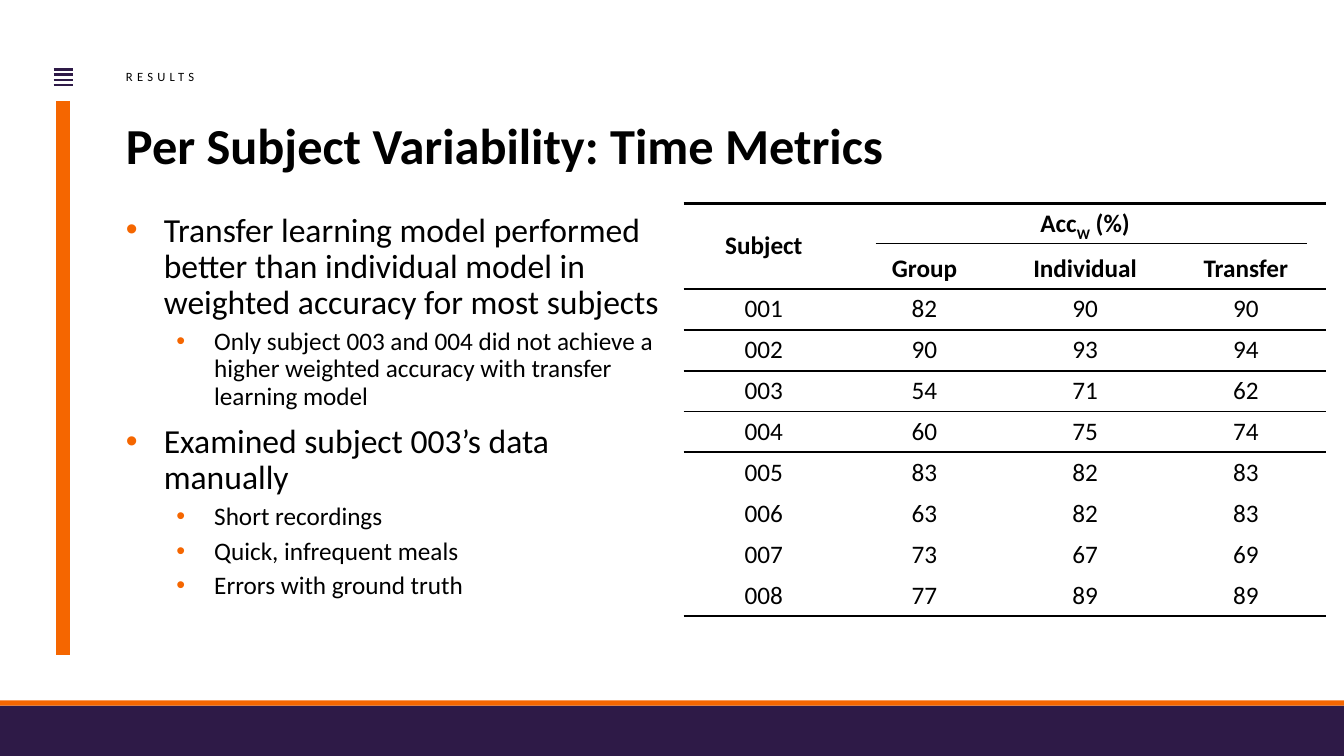
from dataclasses import dataclass

from lxml import etree
from pptx import Presentation
from pptx import util as u
from pptx.dml.color import RGBColor
from pptx.enum import shapes, text
from pptx.oxml import ns

PX = 9525


@dataclass(frozen=True)
class Theme:
    font: str = "Calibri"
    black: str = "000000"
    purple: str = "2E1A47"
    orange: str = "F56600"
    title: int = 36
    label: int = 9
    levels: tuple = (24, 18)
    cell: int = 18


def px(n):
    return u.Emu(n * PX)


def rgb(color):
    return RGBColor.from_string(color)


def child(parent, tag, **attrs):
    return etree.SubElement(parent, ns.qn(tag), **attrs)


class Deck:
    def __init__(self, theme):
        self.theme = theme
        self.prs = Presentation()
        self.prs.slide_width, self.prs.slide_height = px(1280), px(720)
        self.s = self.prs.slides.add_slide(self.prs.slide_layouts[1])

    def run(self, p, words, size, bold=False):
        r = p.add_run()
        r.text = words
        r.font.name = self.theme.font
        r.font.size = u.Pt(size)
        r.font.bold = bold
        r.font.color.rgb = rgb(self.theme.black)
        return r

    def frame(self, sp, box):
        sp.left, sp.top, sp.width, sp.height = map(px, box)
        tf = sp.text_frame
        tf.word_wrap = True
        tf.auto_size = text.MSO_AUTO_SIZE.NONE
        tf.vertical_anchor = text.MSO_ANCHOR.TOP
        tf.margin_left = tf.margin_top = tf.margin_right = tf.margin_bottom = 0
        return tf

    def title(self, words, box):
        p = self.frame(self.s.shapes.title, box).paragraphs[0]
        p.alignment = text.PP_ALIGN.LEFT
        p.line_spacing = 0.8
        self.run(p, words, self.theme.title, True)

    def label(self, words, box):
        sp = self.s.shapes.add_textbox(*map(px, box))
        p = self.frame(sp, box).paragraphs[0]
        p.line_spacing = 0.9
        r = self.run(p, words, self.theme.label)
        r._r.get_or_add_rPr().set("spc", "300")

    def bullets(self, items, box):
        tf = self.frame(self.s.placeholders[1], box)
        for i, (level, words) in enumerate(items):
            p = tf.add_paragraph() if i else tf.paragraphs[0]
            p.level = level
            p.line_spacing = 0.9
            p.space_before = u.Pt((10, 5)[level] if i else 0)
            pPr = p._p.get_or_add_pPr()
            pPr.set("marL", str(px((36, 84)[level])))
            pPr.set("indent", str(px(-36)))
            child(child(pPr, "a:buClr"), "a:srgbClr", val=self.theme.orange)
            child(pPr, "a:buFont", typeface="Arial")
            child(pPr, "a:buChar", char="•")
            self.run(p, words, self.theme.levels[level])

    def line(self, x1, y1, x2, y2, color, width):
        cx = self.s.shapes.add_connector(
            shapes.MSO_CONNECTOR.STRAIGHT, px(x1), px(y1), px(x2), px(y2))
        cx.line.color.rgb = rgb(color)
        cx.line.width = u.Pt(width)
        child(cx._element.spPr, "a:effectLst")

    def band(self, box, color):
        sp = self.s.shapes.add_shape(shapes.MSO_SHAPE.RECTANGLE, *map(px, box))
        sp.shadow.inherit = False
        sp.fill.solid()
        sp.fill.fore_color.rgb = rgb(color)
        sp.line.fill.background()

    def border(self, cell, edges):
        tcPr = cell._tc.get_or_add_tcPr()
        for i, (tag, width) in enumerate(edges):
            ln = etree.Element(ns.qn(tag), w=str(u.Pt(width)))
            if width:
                child(child(ln, "a:solidFill"), "a:srgbClr", val=self.theme.black)
            else:
                child(ln, "a:noFill")
            tcPr.insert(i, ln)

    def table(self, rows, box, merges, rules, header_rows):
        gf = self.s.shapes.add_table(len(rows), len(rows[0]), *map(px, box))
        tbl = gf.table
        tbl.first_row = tbl.horz_banding = False
        style = gf._element.find(".//" + ns.qn("a:tableStyleId"))
        style.text = "{2D5ABB26-0587-4C30-8999-92F81FD0307C}"
        for first, last in merges:
            tbl.cell(*first).merge(tbl.cell(*last))
        for i, row in enumerate(rows):
            header = i < header_rows
            for j, value in enumerate(row):
                cell = tbl.cell(i, j)
                cell.fill.background()
                span = cell.span_height if cell.is_merge_origin else 1
                self.border(cell, [("a:lnL", 0), ("a:lnR", 0),
                                   ("a:lnT", rules.get(i, 0)),
                                   ("a:lnB", rules.get(i + span, 0))])
                if header:
                    cell.vertical_anchor = text.MSO_ANCHOR.MIDDLE
                if value is None:
                    continue
                p = cell.text_frame.paragraphs[0]
                p.alignment = text.PP_ALIGN.CENTER
                for k, part in enumerate(value.split("_")):
                    r = self.run(p, part, self.theme.cell, header)
                    if k == 1:
                        r._r.get_or_add_rPr().set("baseline", "-25000")


def main():
    theme = Theme()
    deck = Deck(theme)

    for i in range(4):
        y = 66 + 5 * i
        deck.line(51, y, 70, y, theme.purple, 1.75)
    deck.line(60, 96, 60, 624, theme.orange, 10)
    deck.band((0, 672, 1280, 48), theme.purple)
    deck.band((0, 667, 1280, 5), theme.orange)

    deck.label("RESULTS", (120, 67, 400, 13))
    deck.title("Per Subject Variability: Time Metrics", (120, 120, 905, 48))
    deck.bullets([
        (0, "Transfer learning model performed better than individual model "
            "in weighted accuracy for most subjects"),
        (1, "Only subject 003 and 004 did not achieve a higher weighted "
            "accuracy with transfer learning model"),
        (0, "Examined subject 003’s data manually"),
        (1, "Short recordings"),
        (1, "Quick, infrequent meals"),
        (1, "Errors with ground truth"),
    ], (120, 203, 520, 405))

    scores = [(82, 90, 90), (90, 93, 94), (54, 71, 62), (60, 75, 74),
              (83, 82, 83), (63, 82, 83), (73, 67, 69), (77, 89, 89)]
    rows = [("Subject", "Acc_W_ (%)", None, None),
            (None, "Group", "Individual", "Transfer")]
    rows += [(f"{n:03}", *map(str, score)) for n, score in enumerate(scores, 1)]
    rules = {0: 2.25, **dict.fromkeys(range(2, 7), 1.5), len(rows): 2.25}
    merges = [((0, 0), (1, 0)), ((0, 1), (0, 3))]
    deck.table(rows, (651, 194, 612, 370), merges, rules, 2)
    deck.line(834, 232, 1245, 232, theme.black, 1)

    deck.prs.save("out.pptx")


if __name__ == "__main__":
    main()
